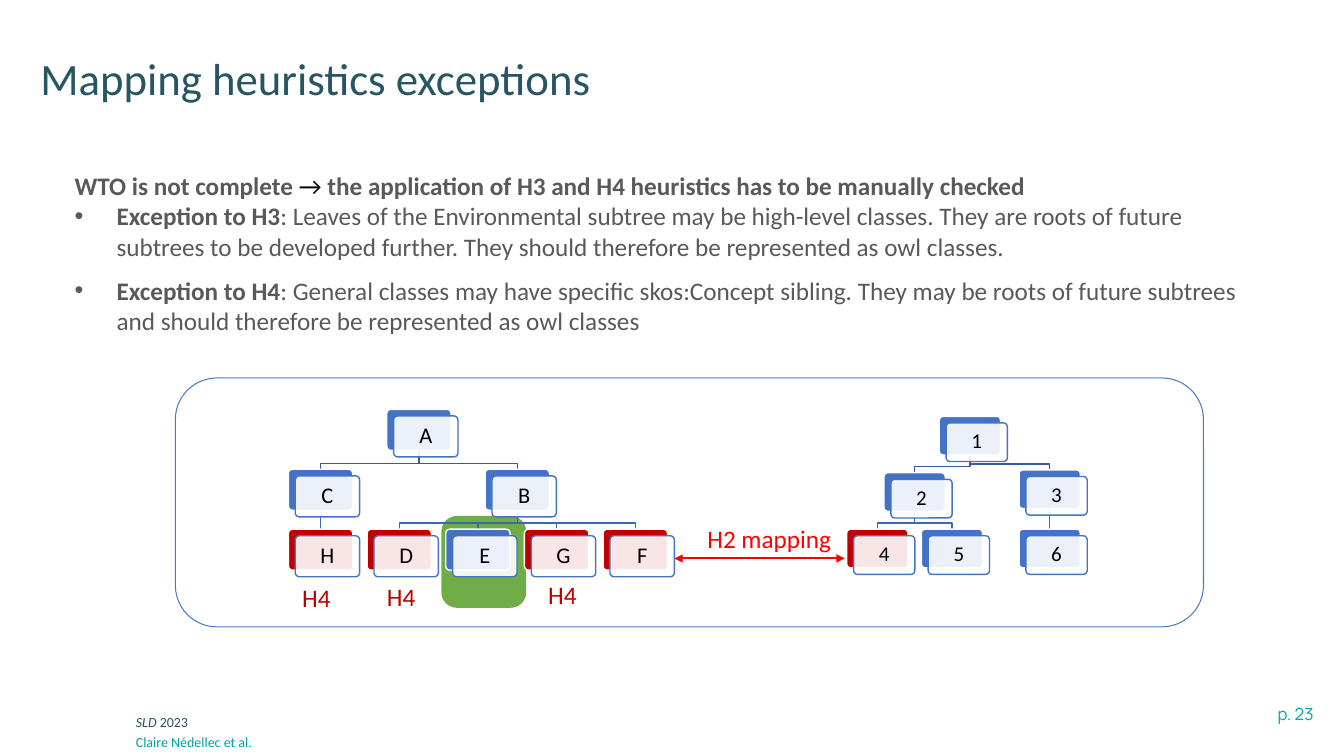
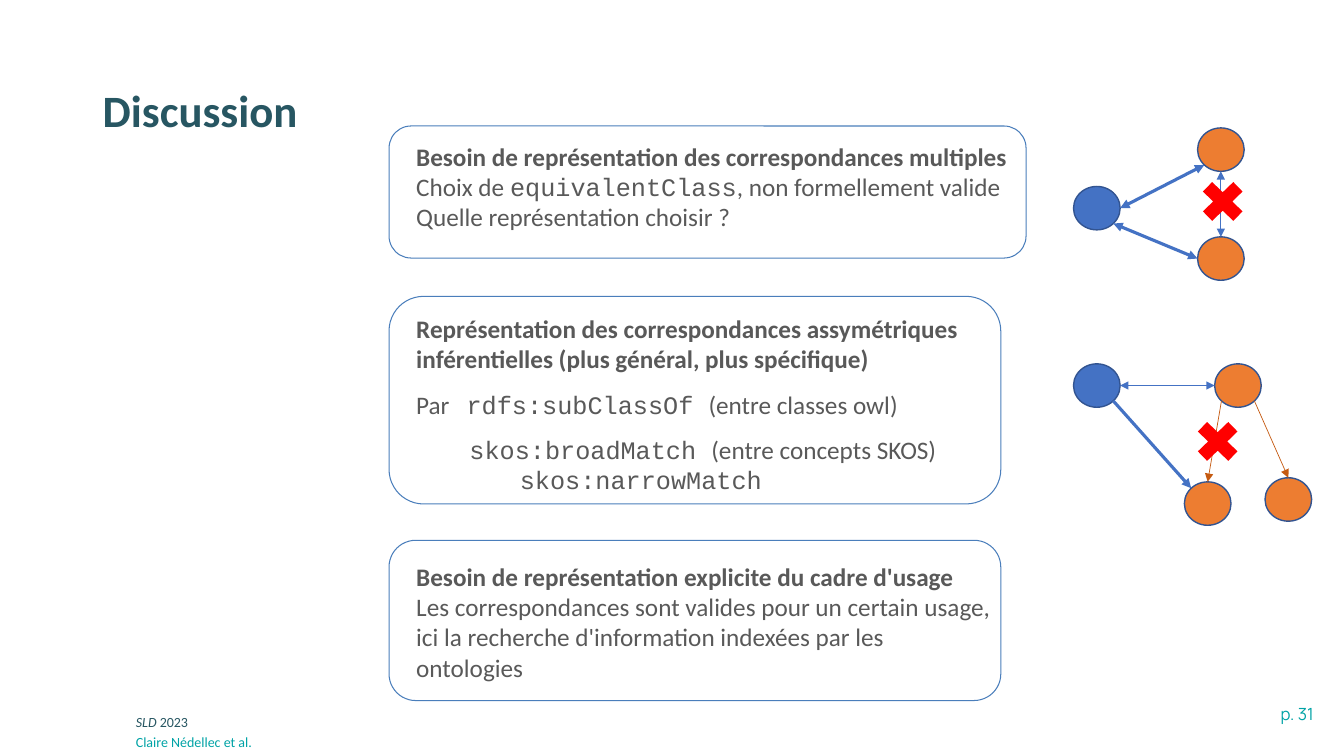
"""Build two slides on ontology mapping: heuristics exceptions and discussion."""
from dataclasses import dataclass
from math import cos, radians, sin

from lxml import etree
from pptx import Presentation
from pptx.dml.color import RGBColor
from pptx.enum import shapes as sh, text as tx
from pptx.oxml import ns
from pptx.util import Pt


@dataclass(frozen=True)
class Theme:
    font: str = "Calibri"
    code_font: str = "Courier New"
    page_font: str = "Manrope"
    title_size: float = 32
    body_size: float = 18
    node_size: float = 16
    small_node_size: float = 15
    page_size: float = 12
    footer_size: float = 10
    petrol: str = "275662"
    teal: str = "00A3A6"
    grey: str = "595959"
    black: str = "000000"
    white: str = "FFFFFF"
    blue: str = "4472C4"
    blue_rim: str = "325491"
    upper_link: str = "365B9D"
    lower_link: str = "3E67B2"
    frame: str = "4A7EBB"
    orange: str = "ED7D31"
    brown: str = "C55A11"
    green: str = "70AD47"
    dark_red: str = "C00000"
    red: str = "FF0000"


THEME = Theme()
BOLD = {"bold": True}
CODE = {"name": THEME.code_font}


@dataclass
class Tree:
    left: float
    top: float
    column: float
    row: float
    width: float
    height: float
    size: float


def rgb(value):
    return RGBColor.from_string(value)


def style_font(font, color=None, size=None, name=None, bold=None, italic=None):
    for attribute, value in (("size", size and Pt(size)), ("name", name),
                             ("bold", bold), ("italic", italic)):
        if value is not None:
            setattr(font, attribute, value)
    if color:
        font.color.rgb = rgb(color)


def place(item, left, top, width, height):
    item.left, item.top, item.width, item.height = map(Pt, (left, top, width, height))


def write(paragraph, runs, color=THEME.grey, size=THEME.body_size, name=THEME.font,
          bold=None, align=None, spacing=None, before=0, indent=0, bullet=None, tab=None):
    properties = paragraph._p.get_or_add_pPr()
    hanging = indent if bullet else 0
    properties.set("marL", str(Pt(indent)))
    properties.set("indent", str(-Pt(hanging)))
    if bullet:
        etree.SubElement(properties, ns.qn("a:buChar")).set("char", bullet)
    else:
        etree.SubElement(properties, ns.qn("a:buNone"))
    if tab:
        stops = etree.SubElement(properties, ns.qn("a:tabLst"))
        stop = etree.SubElement(stops, ns.qn("a:tab"))
        stop.set("pos", str(Pt(tab)))
        stop.set("algn", "l")
    paragraph.alignment = align or tx.PP_ALIGN.LEFT
    paragraph.space_before = Pt(before)
    if spacing:
        paragraph.line_spacing = spacing
    style_font(paragraph.font, color, size, name, bold)
    for words, overrides in runs:
        run = paragraph.add_run()
        run.text = words
        style_font(run.font, **overrides)


def fill_text(frame, paragraphs):
    frame.word_wrap = True
    frame.auto_size = tx.MSO_AUTO_SIZE.NONE
    for position, (runs, options) in enumerate(paragraphs):
        paragraph = frame.add_paragraph() if position else frame.paragraphs[0]
        write(paragraph, runs, **options)


def label(slide, box, paragraphs):
    caption = slide.shapes.add_textbox(*map(Pt, box))
    fill_text(caption.text_frame, paragraphs)
    return caption


def preset(slide, kind, box, fill=None, line=None, weight=1.0, corner=None):
    shape = slide.shapes.add_shape(kind, *map(Pt, box))
    shape.shadow.inherit = False
    if corner:
        shape.adjustments[0] = corner
    paint(shape, fill, line, weight)
    return shape


def paint(shape, fill, line, weight):
    if fill:
        shape.fill.solid()
        shape.fill.fore_color.rgb = rgb(fill)
    else:
        shape.fill.background()
    if line:
        shape.line.color.rgb = rgb(line)
        shape.line.width = Pt(weight)
    else:
        shape.line.fill.background()


def rounded(slide, box, **options):
    return preset(slide, sh.MSO_SHAPE.ROUNDED_RECTANGLE, box, **options)


def connect(slide, start, end, color, weight, ends=()):
    link = slide.shapes.add_connector(sh.MSO_CONNECTOR.STRAIGHT, *map(Pt, (*start, *end)))
    link.line.color.rgb = rgb(color)
    link.line.width = Pt(weight)
    for tip in ends:
        etree.SubElement(link.line._get_or_add_ln(), ns.qn(f"a:{tip}")).set("type", "triangle")
    etree.SubElement(link._element.spPr, ns.qn("a:effectLst"))


BOTH = ("headEnd", "tailEnd")
END = ("tailEnd",)


def branch(slide, start, end, color):
    """Draw the elbow from a parent node down to a child node."""
    if start[0] == end[0]:
        connect(slide, start, end, color, 1)
        return
    bend = end[1] - 4.3
    points = [(start[0], bend), (end[0], bend), end]
    builder = slide.shapes.build_freeform(*map(Pt, start))
    builder.add_line_segments([tuple(map(Pt, point)) for point in points], close=False)
    elbow = builder.convert_to_shape()
    elbow.shadow.inherit = False
    paint(elbow, None, color, 1)


def node(slide, tree, name, left, top, color):
    """Draw a coloured plate with a translucent name card over it."""
    rounded(slide, (left, top, tree.width, tree.height),
            fill=color, line=THEME.white, corner=0.1)
    card = rounded(slide, (left + 4.9, top + 4.7, tree.width, tree.height),
                   fill=THEME.white, line=THEME.blue, corner=0.1)
    white = card._element.spPr.find(ns.qn("a:solidFill"))[0]
    etree.SubElement(white, ns.qn("a:alpha")).set("val", "90000")
    frame = card.text_frame
    frame.margin_left = frame.margin_right = frame.margin_top = frame.margin_bottom = Pt(4)
    frame.vertical_anchor = tx.MSO_ANCHOR.MIDDLE
    fill_text(frame, [([(name, {})], dict(color=THEME.black, size=tree.size, spacing=0.9,
                                         align=tx.PP_ALIGN.CENTER))])


def hierarchy(slide, tree, nodes, mapped):
    """Draw a tree from name: (column, row, parent)."""
    spots = {name: (tree.left + column * tree.column, tree.top + row * tree.row)
             for name, (column, row, _) in nodes.items()}
    middle = tree.width / 2
    for name, (_, _, parent) in nodes.items():
        if parent:
            (parent_left, parent_top), (left, top) = spots[parent], spots[name]
            color = THEME.lower_link if nodes[parent][2] else THEME.upper_link
            branch(slide, (parent_left + middle, parent_top + tree.height),
                   (left + middle, top), color)
    for name, (left, top) in spots.items():
        node(slide, tree, name, left, top, THEME.dark_red if name in mapped else THEME.blue)


DISC = (33.3, 31)


def rim(disc, angle):
    """Return the point of a disc's edge at a clockwise angle from the right."""
    turn = radians(angle)
    return tuple(corner + side / 2 * (1 + part)
                 for corner, side, part in zip(disc, DISC, (cos(turn), sin(turn))))


def graph(slide, source, targets, links, cross):
    """Draw one blue and several orange discs, their links and a red cross."""
    discs = [source, *targets]
    for disc in discs:
        preset(slide, sh.MSO_SHAPE.OVAL, (*disc, *DISC), line=THEME.blue_rim,
               fill=THEME.blue if disc == source else THEME.orange)
    for start, leave, end, arrive, color, weight, ends in links:
        connect(slide, rim(discs[start], leave), rim(discs[end], arrive), color, weight, ends)
    preset(slide, sh.MSO_SHAPE.MATH_MULTIPLY, (*cross, 41.8, 40.3), fill=THEME.red)


def start_slide(deck, layout, title, left, top, page, bold=False):
    slide = deck.slides.add_slide(deck.slide_layouts[layout])
    heading = slide.shapes.title
    place(heading, left, top, 828, 104.4)
    heading.text_frame.vertical_anchor = tx.MSO_ANCHOR.MIDDLE
    fill_text(heading.text_frame, [([(title, {})], dict(
        color=THEME.petrol, size=THEME.title_size, bold=bold, spacing=0.9))])
    label(slide, (781.2, 499, 164.2, 21.6), [([(f"p. {page}", {})], dict(
        color=THEME.teal, size=THEME.page_size, name=THEME.page_font,
        align=tx.PP_ALIGN.RIGHT))])
    for top, color, runs in (
            (506.2, THEME.petrol, [("SLD ", {"italic": True}), ("2023", {})]),
            (520.6, THEME.teal, [("Claire Nédellec et al.", {})])):
        label(slide, (90, top, 528.5, 19.4),
              [(runs, dict(color=color, size=THEME.footer_size))])
    return slide


def exceptions_slide(deck):
    slide = start_slide(deck, 1, "Mapping heuristics exceptions", 21.6, 5.8, 23)
    rounded(slide, (316.8, 370.1, 57.6, 62.6), fill=THEME.green, line=THEME.green, weight=3)
    body = slide.placeholders[1]
    place(body, 46.1, 107.3, 867.6, 136.8)
    fill_text(body.text_frame, [
        ([("WTO is not complete ", BOLD), ("→ ", {"color": THEME.black}),
          ("the application of H3 and H4 heuristics has to be manually checked", BOLD)],
         dict(spacing=1.5)),
        ([("Exception to H3", BOLD),
          (": Leaves of the Environmental subtree may be high-level classes. They are roots of "
           "future subtrees to be developed further. They should therefore be represented as "
           "owl classes.", {})], dict(indent=30, bullet="•")),
        ([("Exception to H4", BOLD),
          (": General classes may have specific skos:Concept sibling. They may be roots of "
           "future subtrees and should therefore be represented as owl classes", {})],
         dict(indent=30, bullet="•", before=10)),
    ])
    connect(slide, (481.7, 398.9), (603.4, 398.9), THEME.red, 1.5, BOTH)
    hierarchy(slide, Tree(206, 292.4, 56.2, 42.8, 46, 29.3, THEME.node_size), {
        "A": (1.25, 0, None), "C": (0, 1, "A"), "H": (0, 2, "C"), "B": (2.5, 1, "A"),
        "D": (1, 2, "B"), "E": (2, 2, "B"), "G": (3, 2, "B"), "F": (4, 2, "B")}, "HDGF")
    hierarchy(slide, Tree(604.8, 297.4, 53.3, 40.3, 43.8, 27.6, THEME.small_node_size), {
        "1": (1.24, 0, None), "2": (0.5, 1, "1"), "4": (0, 2, "2"), "5": (1, 2, "2"),
        "3": (2.31, 0.95, "1"), "6": (2.31, 2, "3")}, "4")
    mapping = label(slide, (498.2, 370.1, 103.7, 28.8),
                    [([("H2 mapping", {})], dict(color=THEME.red))])
    mapping.text_frame.word_wrap = False
    rounded(slide, (125.3, 270, 734.4, 177.8), line=THEME.frame, weight=0.75)
    for left, top in ((384.5, 410.4), (269.3, 411.8), (208.8, 412.6)):
        label(slide, (left, top, 37.4, 28.8), [([("H4", {})], dict(color=THEME.dark_red))])


def discussion_slide(deck):
    slide = start_slide(deck, 5, "Discussion", 66.2, 28.8, 31, bold=True)
    cards = [
        (90, 455, 94.3, 7.2, [
            ([("Besoin de représentation des correspondances multiples", {})], BOLD),
            ([("Choix de ", {}), ("equivalentClass", CODE),
              (", non formellement valide", {})], {}),
            ([("Quelle représentation choisir ?", {})], {})]),
        (211.7, 437, 148.3, 8.6, [
            ([("Représentation des correspondances assymétriques inférentielles "
               "(plus général, plus spécifique)", {})], BOLD),
            ([("Par\t", {}), ("rdfs:subClassOf ", CODE), ("(entre classes owl)", {})],
             dict(spacing=1.5, tab=38)),
            ([("skos:broadMatch ", CODE), ("(entre concepts SKOS)", {})],
             dict(spacing=1.5, indent=38)),
            ([("skos:narrowMatch", {})], dict(indent=74, **CODE))]),
        (385.9, 437, 114.5, 11.5, [
            ([("Besoin de représentation explicite du cadre d'usage", {})], BOLD),
            ([("Les correspondances sont valides pour un certain usage, ici la recherche "
               "d'information indexées par les ontologies", {})], {})]),
    ]
    for top, width, height, inset, paragraphs in cards:
        label(slide, (290.2, top + inset, width - 11.5, height - 2 * inset), paragraphs)
        rounded(slide, (277.9, top, width, height), line=THEME.frame, weight=0.75)
    graph(slide, (766.8, 133.2), [(855.4, 91.4), (855.4, 169.2)], [
        (0, 0, 1, 135, THEME.blue, 2.25, BOTH),
        (0, 45, 2, 180, THEME.blue, 2.25, BOTH),
        (1, 90, 2, 270, THEME.blue, 0.5, BOTH)], (852.5, 123.8))
    graph(slide, (766.8, 259.9), [(867.6, 259.9), (846, 344.2), (903.6, 341.3)], [
        (0, 0, 1, 180, THEME.blue, 0.5, BOTH),
        (0, 45, 2, 225, THEME.blue, 2.25, END),
        (1, 45, 3, 270, THEME.brown, 0.5, END),
        (1, 135, 2, 270, THEME.brown, 0.5, END)], (848.9, 295.2))


def main():
    deck = Presentation()
    deck.slide_width, deck.slide_height = Pt(960), Pt(540)
    exceptions_slide(deck)
    discussion_slide(deck)
    deck.save("out.pptx")


if __name__ == "__main__":
    main()
